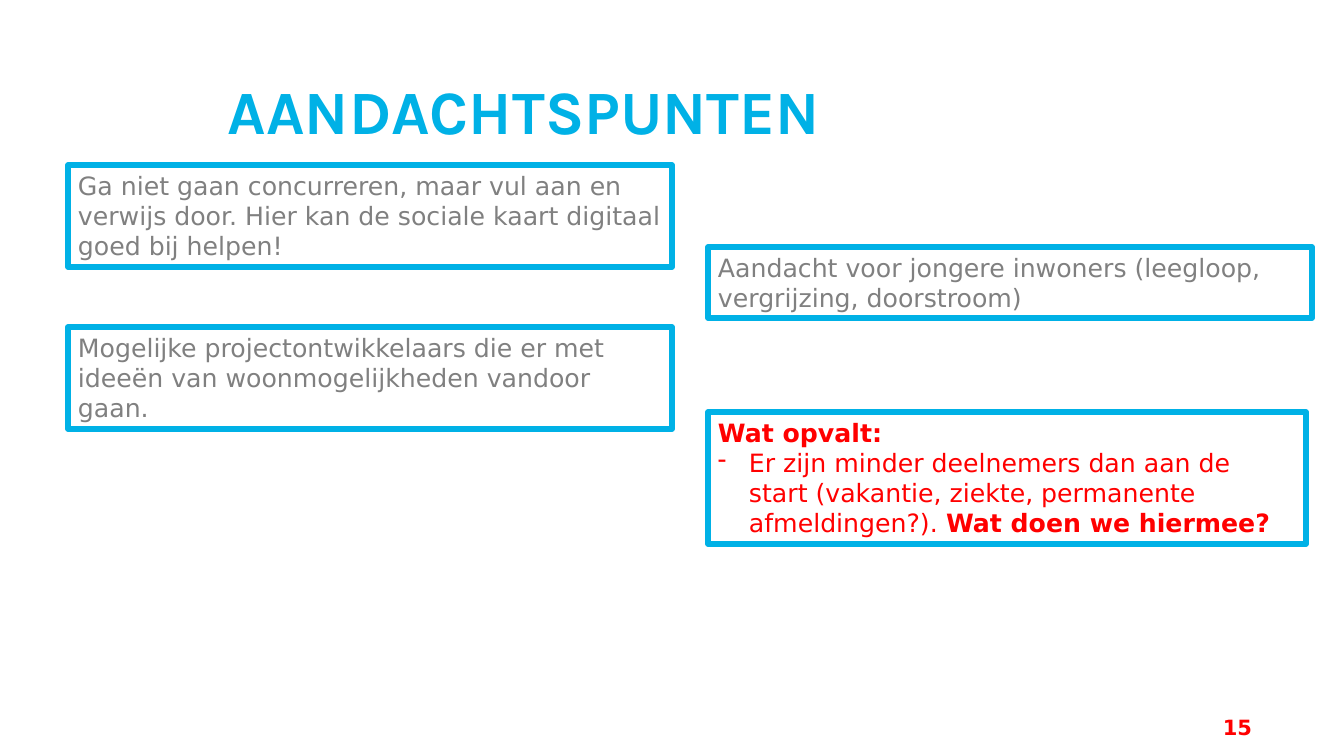
from lxml import etree
from pptx import Presentation
from pptx.dml.color import RGBColor
from pptx.enum.shapes import MSO_SHAPE
from pptx.enum.text import MSO_ANCHOR, MSO_AUTO_SIZE, PP_ALIGN
from pptx.oxml.ns import qn
from pptx.util import Pt

RECTANGLE = MSO_SHAPE.RECTANGLE
MIDDLE, TOP = MSO_ANCHOR.MIDDLE, MSO_ANCHOR.TOP
LEFT, RIGHT = PP_ALIGN.LEFT, PP_ALIGN.RIGHT
NO_FIT = MSO_AUTO_SIZE.NONE

BLUE = RGBColor(0x00, 0xB1, 0xE6)
GRAY = RGBColor(0x80, 0x80, 0x80)
RED = RGBColor(0xFF, 0x00, 0x00)
WHITE = RGBColor(0xFF, 0xFF, 0xFF)

# Content: a paragraph is a list of (text, bold) spans; boxes are in px
TITLE = [[("AANDACHTSPUNTEN", True)]]
PAGE_NUMBER = [[("15", True)]]
LEFT_COLUMN, RIGHT_COLUMN, BOX_WIDTH = 68, 708, 604
POINTS = [
    (LEFT_COLUMN, 165, 102, "Ga niet gaan concurreren, maar vul aan en verwijs door. "
     "Hier kan de sociale kaart digitaal goed bij helpen!"),
    (LEFT_COLUMN, 327, 102, "Mogelijke projectontwikkelaars die er met ideeën van "
     "woonmogelijkheden vandoor gaan."),
    (RIGHT_COLUMN, 247, 71, "Aandacht voor jongere inwoners (leegloop, vergrijzing, "
     "doorstroom)"),
]
REMARK = [
    [("Wat opvalt:", True)],
    [("Er zijn minder deelnemers dan aan de start (vakantie, ziekte, permanente "
      "afmeldingen?). ", False), ("Wat doen we hiermee?", True)],
]


def px(length):
    return round(length * 914400 / 100.8)


def place(shape, left, top, width, height):
    shape.left, shape.top = px(left), px(top)
    shape.width, shape.height = px(width), px(height)


def write(shape, paragraphs, size=18, color=GRAY, font="DejaVu Sans", align=LEFT,
          anchor=TOP, margins=(10, 5), spacing=None, dashed=()):
    frame = shape.text_frame
    frame.word_wrap = True
    frame.auto_size = NO_FIT
    frame.vertical_anchor = anchor
    frame.margin_left = frame.margin_right = px(margins[0])
    frame.margin_top = frame.margin_bottom = px(margins[1])
    for index, spans in enumerate(paragraphs):
        para = frame.add_paragraph() if index else frame.paragraphs[0]
        para.alignment = align
        if spacing:
            para.line_spacing = spacing
        if index in dashed:
            properties = para._p.get_or_add_pPr()
            properties.set("marL", str(px(31)))
            properties.set("indent", str(-px(31)))
            etree.SubElement(properties, qn("a:buChar"), char="-")
        for text, bold in spans:
            span = para.add_run()
            span.text = text
            span.font.name, span.font.size = font, Pt(size)
            span.font.bold, span.font.color.rgb = bold, color


def add_frame(page, left, top, width, height):
    box = page.shapes.add_shape(RECTANGLE, px(left), px(top), px(width), px(height))
    box.shadow.inherit = False
    box.fill.background()
    box.line.color.rgb = BLUE
    box.line.width = Pt(4)
    etree.SubElement(box.line._get_or_add_ln(), qn("a:round"))
    return box


deck = Presentation()
deck.slide_width, deck.slide_height = px(1344), px(756)
page = deck.slides.add_slide(deck.slide_layouts[5])
page.background.fill.solid()
page.background.fill.fore_color.rgb = WHITE

# Title
place(page.shapes.title, 228, 42, 1021, 146)
write(page.shapes.title, TITLE, size=44, color=BLUE, font="Karla", anchor=MIDDLE,
      margins=(0, 0), spacing=0.9)

# Page number
number = page.shapes.add_textbox(px(1148), px(707), px(104), px(40))
write(number, PAGE_NUMBER, size=15, color=RED, align=RIGHT, anchor=MIDDLE, margins=(0, 0))

# Remark in red
remark = add_frame(page, RIGHT_COLUMN, 412, 598, 132)
remark.fill.solid()
remark.fill.fore_color.rgb = WHITE
write(remark, REMARK, color=RED, dashed=(1,))

# Points of attention
for left, top, height, text in POINTS:
    write(add_frame(page, left, top, BOX_WIDTH, height), [[(text, False)]])

deck.save("out.pptx")
